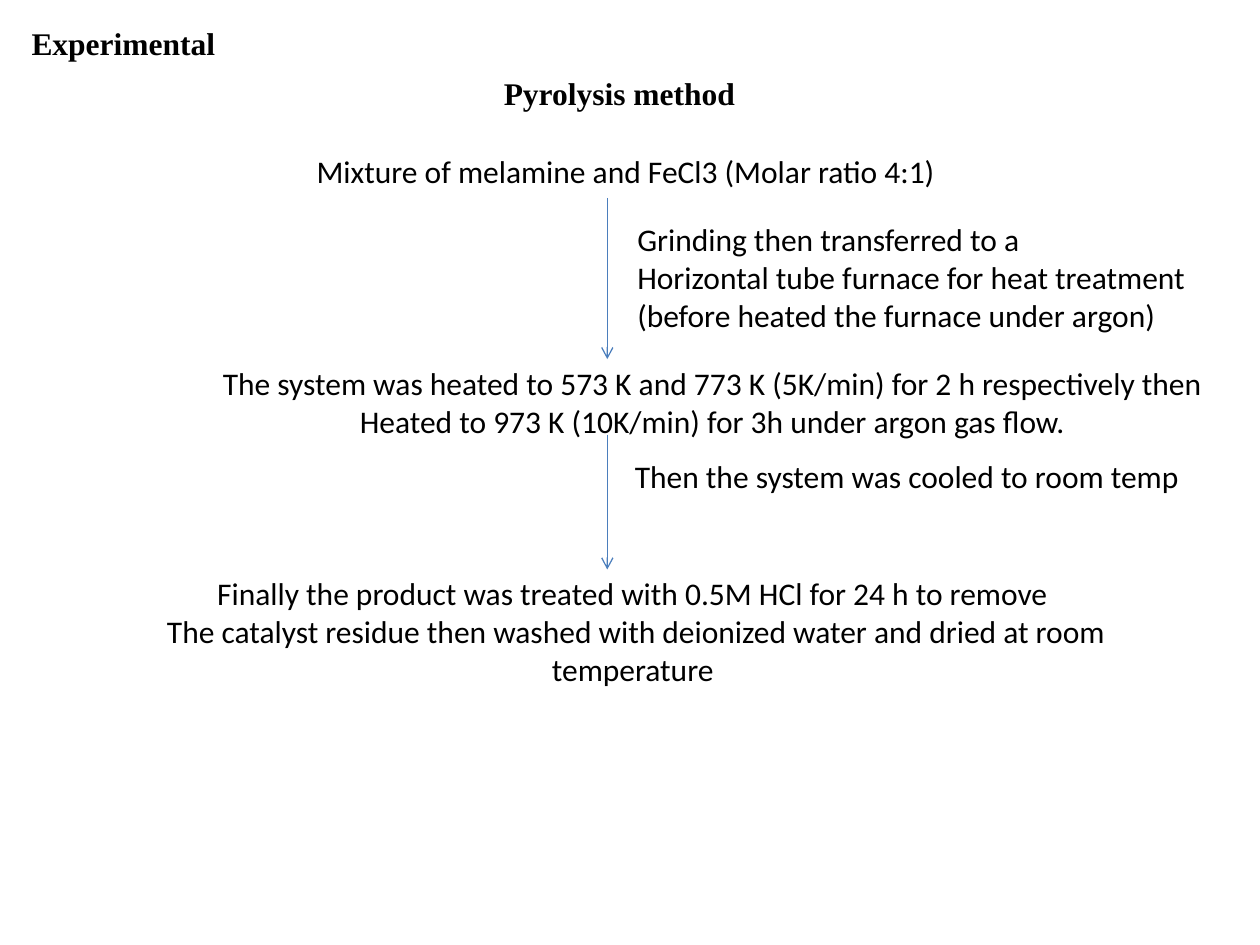
from lxml import etree
from pptx import Presentation
from pptx.dml.color import RGBColor
from pptx.enum.shapes import MSO_CONNECTOR
from pptx.enum.text import MSO_ANCHOR, MSO_AUTO_SIZE, PP_ALIGN
from pptx.oxml.ns import qn
from pptx.util import Inches, Pt

LEFT, CENTER = PP_ALIGN.LEFT, PP_ALIGN.CENTER
TOP = MSO_ANCHOR.TOP
NO_FIT = MSO_AUTO_SIZE.NONE
STRAIGHT = MSO_CONNECTOR.STRAIGHT
TITLE_ONLY = 5
COLUMNS, ROWS = 100, 75
HEADING_FONT, BODY_FONT = "Times New Roman", "Calibri"


def color(hex_string):
    return RGBColor.from_string(hex_string)


def write(frame, text, font=BODY_FONT, size=18, bold=False, ink="000000", align=LEFT, wrap=True):
    frame.auto_size = NO_FIT
    frame.word_wrap = wrap
    frame.vertical_anchor = TOP
    frame.text = text
    for paragraph in frame.paragraphs:
        paragraph.alignment = align
        for run in paragraph.runs:
            run.font.name = font
            run.font.size = Pt(size)
            run.font.bold = bold
            run.font.color.rgb = color(ink)


class FlowSlide:
    arrow_ink = "4B7EBC"
    arrow_width = 0.75

    def __init__(self, deck):
        self.column = deck.slide_width / COLUMNS
        self.row = deck.slide_height / ROWS
        self.slide = deck.slides.add_slide(deck.slide_layouts[TITLE_ONLY])

    def place(self, column, row, columns=0, rows=0):
        return (round(column * self.column), round(row * self.row),
                round(columns * self.column), round(rows * self.row))

    def title(self, text, *cells):
        heading = self.slide.shapes.title
        heading.left, heading.top, heading.width, heading.height = self.place(*cells)
        write(heading.text_frame, text, font=HEADING_FONT, bold=True, wrap=False)

    def text(self, text, *cells, **style):
        block = self.slide.shapes.add_textbox(*self.place(*cells))
        write(block.text_frame, text, **style)

    def down_arrow(self, column, start_row, end_row):
        x, start, _, _ = self.place(column, start_row)
        end = self.place(column, end_row)[1]
        arrow = self.slide.shapes.add_connector(STRAIGHT, x, start, x, end)
        arrow.line.color.rgb = color(self.arrow_ink)
        arrow.line.width = Pt(self.arrow_width)
        etree.SubElement(arrow.line._get_or_add_ln(), qn("a:tailEnd"), type="arrow")
        etree.SubElement(arrow._element.spPr, qn("a:effectLst"))


def main():
    deck = Presentation()
    deck.slide_width, deck.slide_height = Inches(10), Inches(7.5)
    flow = FlowSlide(deck)

    flow.title("Experimental", 1.5, 1.4, 16.7, 4)
    flow.text("Pyrolysis method", 39, 5.4, 21.2, 4, font=HEADING_FONT, bold=True, wrap=False)

    steps = [
        ("Mixture of melamine and FeCl3 (Molar ratio 4:1) ", 16.9, 11.6, 66.1, 4),
        ("The system was heated to 573 K and 773 K (5K/min) for 2 h respectively then\n"
         "Heated to 973 K (10K/min) for 3h under argon gas flow.", 9.8, 28.4, 93.5, 7.1),
        ("Finally the product was treated with 0.5M HCl for 24 h to remove \n"
         "The catalyst residue then washed with deionized water and dried at room temperature ",
         5.9, 45.1, 89.2, 10.1),
    ]
    for step in steps:
        flow.text(*step, align=CENTER)

    transitions = [
        ("Grinding then transferred to a\nHorizontal tube furnace for heat treatment\n"
         "(before heated the furnace under argon)", 49.6, 17, 46, 10.1),
        ("Then the system was cooled to room temp", 49.4, 35.8, 45.7, 4),
    ]
    for transition in transitions:
        flow.text(*transition, wrap=False)

    for start_row, end_row in [(15.7, 28.5), (34.5, 45.2)]:
        flow.down_arrow(48.2, start_row, end_row)

    deck.save("out.pptx")


if __name__ == "__main__":
    main()
